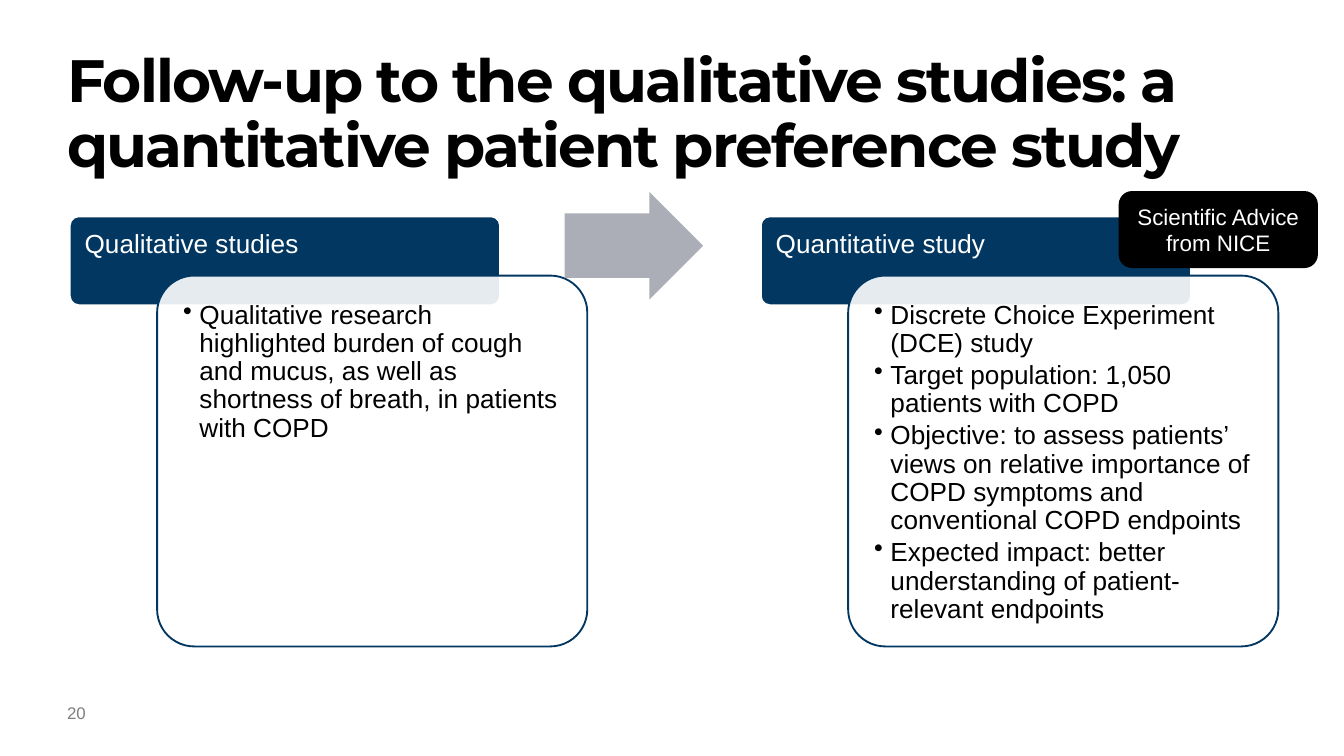
import pptx
import pptx.util
import pptx.dml.color
import pptx.enum.shapes
import pptx.enum.text
from lxml import etree
from pptx.oxml.ns import qn

Cm, Pt = pptx.util.Cm, pptx.util.Pt
RGB = pptx.dml.color.RGBColor
Kind = pptx.enum.shapes.MSO_SHAPE
Align = pptx.enum.text.PP_ALIGN
Anchor = pptx.enum.text.MSO_ANCHOR

# Content
TITLE = ("Follow-up to the qualitative studies: "
         "a quantitative patient preference study")
PANELS = [
    ("Qualitative studies", [
        "Qualitative research highlighted burden of cough and mucus, "
        "as well as shortness of breath, in patients with COPD"]),
    ("Quantitative study", [
        "Discrete Choice Experiment (DCE) study",
        "Target population: 1,050 patients with COPD",
        "Objective: to assess patients’ views on relative importance of "
        "COPD symptoms and conventional COPD endpoints",
        "Expected impact: better understanding of patient-relevant "
        "endpoints"]),
]
BADGE = "Scientific Advice from NICE"
NUMBER = "20"

# Colours
NAVY = RGB(0x02, 0x37, 0x61)
GREY = RGB(0xAB, 0xAE, 0xB7)
DIM = RGB(0x7F, 0x7F, 0x7F)
BLACK = RGB(0, 0, 0)
WHITE = RGB(0xFF, 0xFF, 0xFF)

# Panel grid, in cm
LEFT, TOP, STEP = 1.32, 4.09, 13.06
WIDE, HEAD, BODY = 8.13, 1.68, 7.01
SHIFT, DROP = 1.65, 1.12    # body card against its header
EDGE, INSET = 0.21, 0.28    # text box inside the card, margin inside the box

deck = pptx.Presentation()
deck.slide_width, deck.slide_height = Cm(25.4), Cm(14.29)
slide = deck.slides.add_slide(deck.slide_layouts[5])


def style(para, size, color, font="Arial", bold=False):
    for run in para.runs:
        run.font.size, run.font.name, run.font.bold = Pt(size), font, bold
        run.font.color.rgb = color


def inset(frame, left=0, top=0, right=0, low=0):
    frame.word_wrap = True
    frame.margin_left, frame.margin_top = Cm(left), Cm(top)
    frame.margin_right, frame.margin_bottom = Cm(right), Cm(low)


def shape(kind, area, fill, line=None):
    item = slide.shapes.add_shape(kind, *map(Cm, area))
    item.shadow.inherit = False
    item.fill.solid()
    item.fill.fore_color.rgb = fill
    if line is None:
        item.line.fill.background()
    else:
        item.line.color.rgb, item.line.width = line, Pt(1)
    return item


def write(area, lines, size, color, pads=()):
    frame = slide.shapes.add_textbox(*map(Cm, area)).text_frame
    inset(frame, *pads)
    frame.text = "\n".join(lines)
    for para in frame.paragraphs:
        style(para, size, color)
    return frame.paragraphs


def bullet(para):
    props = para._p.get_or_add_pPr()
    props.set("marL", str(Cm(0.31)))
    props.set("indent", str(-Cm(0.31)))
    etree.SubElement(props, qn("a:buChar")).set("char", "•")


def panel(left, head, points):
    bar = shape(Kind.ROUNDED_RECTANGLE, (left, TOP, WIDE, HEAD), NAVY, WHITE)
    bar.adjustments[0] = 0.1
    label = write((left, TOP, WIDE, DROP), [head], 14, WHITE,
                  (INSET, INSET, INSET, 0.15))
    label[0].line_spacing = 0.9

    # Nearly opaque card over the header
    x, y = left + SHIFT, TOP + DROP
    card = shape(Kind.ROUNDED_RECTANGLE, (x, y, WIDE, BODY), WHITE, NAVY)
    card.adjustments[0] = 0.1
    tint = card.fill._xPr.find(".//" + qn("a:srgbClr"))
    etree.SubElement(tint, qn("a:alpha")).set("val", "90000")

    area = (x + EDGE, y + EDGE, WIDE - 2 * EDGE, BODY - 2 * EDGE)
    for para in write(area, points, 14, BLACK, [INSET] * 4):
        para.line_spacing, para.space_after = 0.9, Pt(2.1)
        bullet(para)


# Title
title = slide.shapes.title
title.left, title.top = Cm(1.27), Cm(0.97)
title.width, title.height = Cm(22.86), Cm(2.67)
frame = title.text_frame
frame.text = TITLE
inset(frame)
frame.auto_size = pptx.enum.text.MSO_AUTO_SIZE.NONE
frame.vertical_anchor = Anchor.TOP
para = frame.paragraphs[0]
para.alignment, para.line_spacing = Align.LEFT, 0.9
style(para, 32, BLACK, "Montserrat", True)
para.runs[0].font._element.set("spc", "-100")

# Slide number
write((1.27, 13.28, 0.64, 0.64), [NUMBER], 9, DIM)

# Panels and the arrow between them
for i, (head, points) in enumerate(PANELS):
    panel(LEFT + i * STEP, head, points)
arrow = shape(Kind.RIGHT_ARROW, (10.67, 3.63, 2.62, 2.03), GREY)
arrow.adjustments[0], arrow.adjustments[1] = 0.6, 0.5

# Badge
badge = shape(Kind.ROUNDED_RECTANGLE, (21.16, 3.63, 3.73, 1.42), BLACK, BLACK)
frame = badge.text_frame
frame.text = BADGE
frame.word_wrap = True
frame.vertical_anchor = Anchor.MIDDLE
frame.paragraphs[0].alignment = Align.CENTER
style(frame.paragraphs[0], 12, WHITE)

deck.save("out.pptx")
